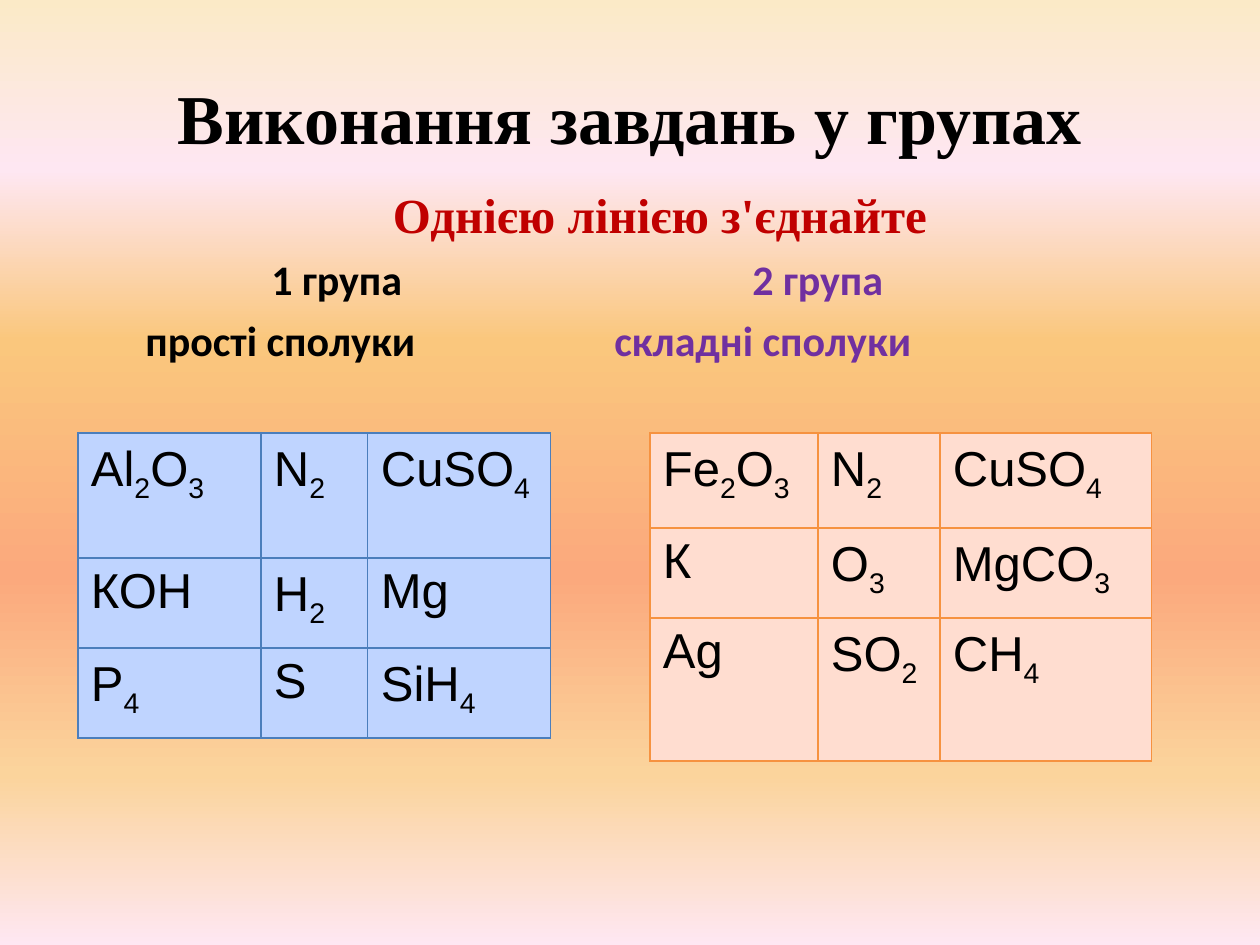
from itertools import groupby

from lxml.etree import SubElement
from pptx import Presentation
from pptx.dml.color import RGBColor
from pptx.enum.text import MSO_ANCHOR, PP_ALIGN
from pptx.oxml import parse_xml
from pptx.oxml.ns import nsdecls, qn
from pptx.util import Emu, Pt

DPI = 126
BLACK = RGBColor(0x00, 0x00, 0x00)
RED = RGBColor(0xC0, 0x00, 0x00)
PURPLE = RGBColor(0x70, 0x30, 0xA0)
BLUE_LINE = RGBColor(0x4B, 0x7E, 0xBC)
BLUE_FILL = RGBColor(0xBF, 0xD4, 0xFF)
ORANGE_LINE = RGBColor(0xF6, 0x92, 0x40)
ORANGE_FILL = RGBColor(0xFF, 0xDD, 0xD0)
SKY = [
    (0, RGBColor(0xFB, 0xEA, 0xC7)),
    (18, RGBColor(0xFE, 0xE7, 0xF2)),
    (36, RGBColor(0xFA, 0xC7, 0x7D)),
    (61, RGBColor(0xFB, 0xA9, 0x7D)),
    (82, RGBColor(0xFB, 0xD4, 0x9C)),
    (100, RGBColor(0xFE, 0xE7, 0xF2)),
]
TITLE_FONT = {"name": "Times New Roman", "size": Pt(40), "bold": True}
TASK_FONT = {"name": "Times New Roman", "size": Pt(28), "bold": True}
GROUP_FONT = {"name": "Calibri", "size": Pt(24), "bold": True}
FORMULA_FONT = {"name": "Arial", "size": Pt(28), "bold": False}


def px(length):
    return Emu(round(length * 914400 / DPI))


def apply(target, values):
    for name, value in values.items():
        setattr(target, name, value)


def add_run(paragraph, text, font, color):
    run = paragraph.add_run()
    run.text = text
    apply(run.font, font)
    run.font.color.rgb = color


def paint_background(slide):
    fill = slide.background.fill
    fill.gradient()
    fill.gradient_angle = 270
    stops = slide.element.find(".//" + qn("a:gsLst"))
    stops.clear()
    for percent, color in SKY:
        stop = SubElement(stops, qn("a:gs"), pos=str(percent * 1000))
        SubElement(stop, qn("a:srgbClr"), val=str(color))


def place_title(slide, box, text):
    title = slide.shapes.title
    apply(title, dict(zip(("left", "top", "width", "height"), map(px, box))))
    title.text_frame.vertical_anchor = MSO_ANCHOR.MIDDLE
    heading = title.text_frame.paragraphs[0]
    heading.alignment = PP_ALIGN.CENTER
    add_run(heading, text, TITLE_FONT, BLACK)


def add_instructions(slide, box, task, group_rows):
    instructions = slide.shapes.add_textbox(*map(px, box))
    frame = instructions.text_frame
    frame.word_wrap = True
    heading = frame.paragraphs[0]
    apply(heading, {"alignment": PP_ALIGN.CENTER, "space_before": Pt(8)})
    add_run(heading, task, TASK_FONT, RED)
    heading_properties = instructions.element.find(".//" + qn("a:pPr"))
    heading_properties.set("marL", str(px(60)))
    for entries in group_rows:
        row = frame.add_paragraph()
        apply(row, {"alignment": PP_ALIGN.LEFT, "space_before": Pt(6)})
        for _, text, color in entries:
            add_run(row, "\t" + text, GROUP_FONT, color)
        row_properties = list(instructions.element.iter(qn("a:pPr")))[-1]
        tabs = SubElement(row_properties, qn("a:tabLst"))
        for position, _, _ in entries:
            SubElement(tabs, qn("a:tab"), pos=str(px(position)), algn="l")


def add_borders(tc, color):
    properties = tc.get_or_add_tcPr()
    for index, side in enumerate(("lnL", "lnR", "lnT", "lnB")):
        properties.insert(index, parse_xml(
            f'<a:{side} {nsdecls("a")} w="{Pt(0.75)}"><a:solidFill>'
            f'<a:srgbClr val="{color}"/></a:solidFill></a:{side}>'))


def fill_cell(cell, formula, fill_color):
    cell.fill.solid()
    cell.fill.fore_color.rgb = fill_color
    apply(cell, {"margin_left": px(13), "margin_right": px(13),
                 "margin_top": px(9), "margin_bottom": px(6)})
    paragraph = cell.text_frame.paragraphs[0]
    apply(paragraph, {"line_spacing": 0.94, "space_before": Pt(7)})
    for _, symbols in groupby(formula, str.isdigit):
        add_run(paragraph, "".join(symbols), FORMULA_FONT, BLACK)


def add_formulas(slide, origin, widths, heights, formulas, fill_color, line_color):
    size = (sum(widths), sum(heights))
    frame = slide.shapes.add_table(
        len(heights), len(widths), *map(px, (*origin, *size)))
    table = frame.table
    apply(table, {"first_row": False, "horz_banding": False})
    for column, width in zip(table.columns, widths):
        column.width = px(width)
    for row, height, row_formulas in zip(table.rows, heights, formulas):
        row.height = px(height)
        for cell, formula in zip(row.cells, row_formulas):
            fill_cell(cell, formula, fill_color)
    for tc in frame.element.iter(qn("a:tc")):
        add_borders(tc, line_color)
    for run in frame.element.iter(qn("a:r")):
        if run.text.isdigit():
            run.get_or_add_rPr().set("baseline", "-25000")


def main():
    presentation = Presentation()
    apply(presentation, {"slide_width": px(1260), "slide_height": px(945)})
    slide = presentation.slides.add_slide(presentation.slide_layouts[5])
    paint_background(slide)
    place_title(slide, (63, 38, 1134, 158), "Виконання завдань у групах")
    add_instructions(slide, (0, 178, 1260, 635), "Однією лінією з'єднайте", [
        [(259, "1 група", BLACK), (740, "2 група", PURPLE)],
        [(133, "прості сполуки", BLACK), (602, "складні сполуки", PURPLE)],
    ])
    add_formulas(slide, (650, 433), (168, 122, 212), (95, 90, 143), [
        ("Fe2O3", "N2", "CuSO4"),
        ("К", "O3", "MgCO3"),
        ("Ag", "SO2", "CH4"),
    ], ORANGE_FILL, ORANGE_LINE)
    add_formulas(slide, (78, 433), (183, 107, 183), (125, 90, 90), [
        ("Al2O3", "N2", "CuSO4"),
        ("КОН", "H2", "Mg"),
        ("P4", "S", "SiH4"),
    ], BLUE_FILL, BLUE_LINE)
    presentation.save("out.pptx")


if __name__ == "__main__":
    main()
